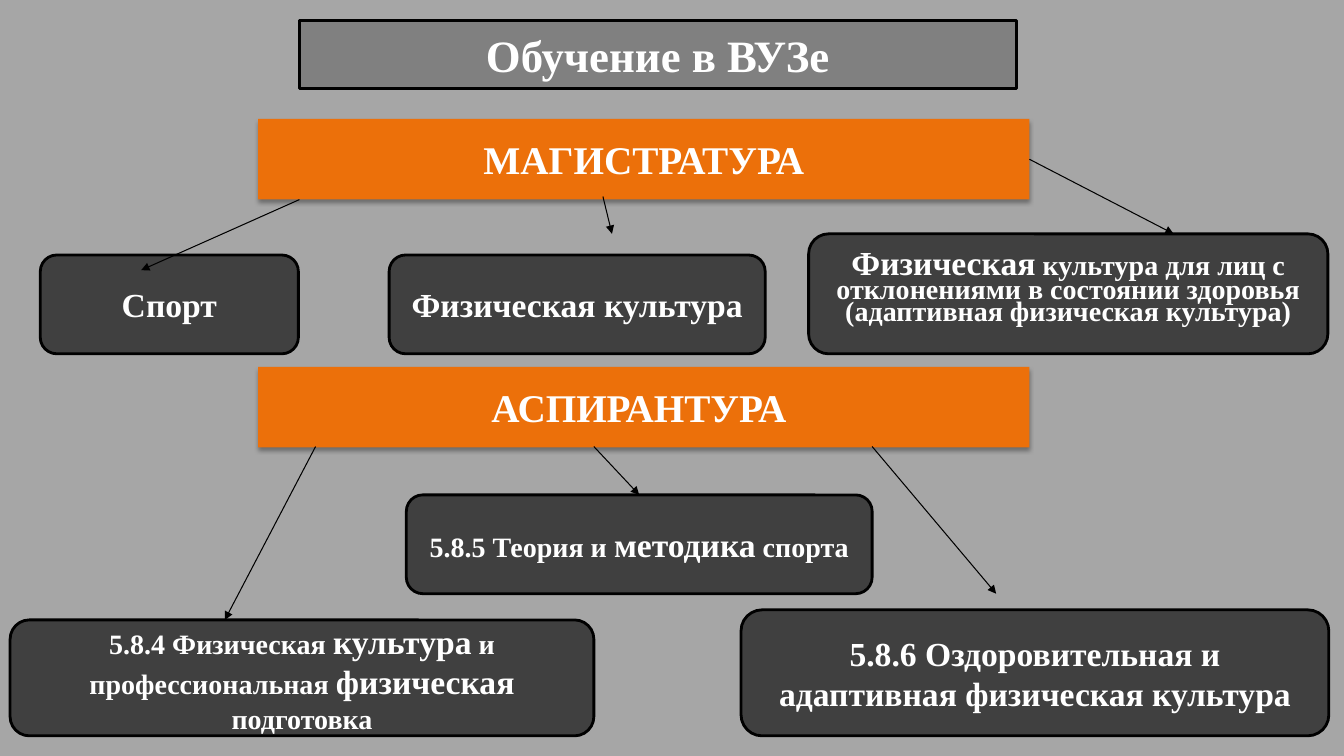
"""Build a slide on the master's and postgraduate study paths of a university."""
from dataclasses import dataclass

from lxml import etree
from pptx import Presentation
from pptx import util as u
from pptx.dml import color
from pptx.enum import shapes, text
from pptx.oxml import ns

WIDE, HIGH = u.Inches(13.33), u.Inches(7.5)
COL, ROW = WIDE / 133.3, HIGH / 75
HUES = {"back": "A6A6A6", "head": "808080", "card": "404040",
        "band": "EC700A", "ink": "000000", "text": "FFFFFF"}
FONT = "Times New Roman"
KIND = shapes.MSO_SHAPE
Run = tuple[str, int]


@dataclass
class Box:
    """A filled block placed in grid columns and rows."""
    col: float
    row: float
    cols: float
    rows: float
    runs: tuple[Run, ...]
    hue: str = "card"
    lead: float | None = None


@dataclass
class Arrow:
    """An arrow between two grid points, with optional (box, side) joins."""
    start: tuple[float, float]
    end: tuple[float, float]
    begin: tuple[str, int] | None = None
    stop: tuple[str, int] | None = None


HEAD = Box(29.7, 2, 71.1, 6.8, (("Обучение в ВУЗе", 32),), "head")
BOXES = {
    "master": Box(25.6, 11.8, 76.5, 8, (("МАГИСТРАТУРА", 28),), "band"),
    "sport": Box(4, 25.3, 25.6, 9.8, (("Спорт", 24),)),
    "culture": Box(38.6, 25.3, 37.3, 9.8, (("Физическая культура", 24),)),
    "adapt": Box(80.2, 23.2, 51.5, 11.9, (
        ("Физическая", 24),
        (" культура для лиц с отклонениями в состоянии здоровья "
         "(адаптивная физическая культура)", 20)), lead=16),
    "post": Box(25.6, 36.4, 76.5, 8, (("АСПИРАНТУРА ", 28),), "band"),
    "train": Box(1, 61.5, 57.9, 11.5, (
        ("5.8.4 Физическая ", 20), ("культура", 24),
        (" и профессиональная ", 20), ("физическая", 24),
        (" подготовка", 20))),
    "theory": Box(40.3, 49.1, 46.2, 9.8, (
        ("5.8.5 Теория и ", 20), ("методика", 24), (" спорта", 20))),
    "health": Box(73.5, 60.5, 58.3, 12.5, (
        ("5.8.6 Оздоровительная и адаптивная физическая культура", 24),)),
}
ARROWS = (
    Arrow((29.7, 19.8), (14, 26.8)),
    Arrow((102.2, 15.8), (116.4, 23.2), begin=("master", 3)),
    Arrow((59.8, 19.5), (60.7, 23.2)),
    Arrow((86.5, 44.3), (98.8, 58.9)),
    Arrow((31.3, 44.3), (22.3, 61.5)),
    Arrow((58.9, 44.3), (63.4, 49.1), stop=("theory", 0)),
)


def rgb(hue: str) -> color.RGBColor:
    """Look up a colour by name."""
    return color.RGBColor.from_string(HUES[hue])


def grid(col: float, row: float) -> tuple[int, int]:
    """Turn grid units into slide lengths."""
    return round(col * COL), round(row * ROW)


def add(parent, tag: str, **attrs: str):
    """Append a drawing element to its parent."""
    return etree.SubElement(parent, ns.qn(tag), attrs)


def write(frame, runs: tuple[Run, ...], *, hue: str = "text",
          bold: bool = True, lead: float | None = None) -> None:
    """Write centred runs of text into a frame."""
    frame.word_wrap = True
    frame.auto_size = text.MSO_AUTO_SIZE.NONE
    frame.vertical_anchor = text.MSO_ANCHOR.MIDDLE
    para = frame.paragraphs[0]
    para.alignment = text.PP_ALIGN.CENTER
    para.line_spacing = u.Pt(lead) if lead else 1.0
    for words, size in runs:
        run = para.add_run()
        run.text = words
        font = run.font
        font.name, font.size, font.bold = FONT, u.Pt(size), bold
        font.color.rgb = rgb(hue)


def dress(shape, box: Box) -> None:
    """Give a shape its fill, outline or shadow, and text."""
    shape.fill.solid()
    shape.fill.fore_color.rgb = rgb(box.hue)
    shape.shadow.inherit = False
    if box.hue == "band":
        shape.line.fill.background()
        glow = add(shape.element.spPr.find(ns.qn("a:effectLst")),
                   "a:outerShdw", blurRad=str(u.Pt(3.1)),
                   dist=str(u.Pt(1.8)), dir="5400000", rotWithShape="0")
        tint = add(glow, "a:srgbClr", val=HUES["ink"])
        add(tint, "a:alpha", val="35000")
    else:
        shape.line.color.rgb = rgb("ink")
        shape.line.width = u.Pt(2)
    write(shape.text_frame, box.runs, lead=box.lead)


def title(slide, box: Box) -> None:
    """Move the title placeholder and round its corners."""
    shape = slide.shapes.title
    shape.left, shape.top = grid(box.col, box.row)
    shape.width, shape.height = grid(box.cols, box.rows)
    add(add(shape.element.spPr, "a:prstGeom", prst="roundRect"), "a:avLst")
    dress(shape, box)


def block(slide, box: Box):
    """Draw a band or a card."""
    kind = (KIND.RECTANGLE if box.hue == "band"
            else KIND.FLOWCHART_ALTERNATE_PROCESS)
    shape = slide.shapes.add_shape(
        kind, *grid(box.col, box.row), *grid(box.cols, box.rows))
    dress(shape, box)
    return shape


def link(slide, arrow: Arrow, made: dict) -> None:
    """Draw an arrow and join it where it meets a side's middle."""
    line = slide.shapes.add_connector(
        shapes.MSO_CONNECTOR.STRAIGHT, *grid(*arrow.start), *grid(*arrow.end))
    if arrow.begin:
        name, side = arrow.begin
        line.begin_connect(made[name], side)
    if arrow.stop:
        name, side = arrow.stop
        line.end_connect(made[name], side)
    line.line.color.rgb = rgb("ink")
    line.line.width = u.Pt(0.75)
    frame = line.element.spPr
    add(frame.find(ns.qn("a:ln")), "a:tailEnd", type="triangle")
    add(frame, "a:effectLst")


def main() -> None:
    """Build and save the slide."""
    deck = Presentation()
    deck.slide_width, deck.slide_height = WIDE, HIGH
    slide = deck.slides.add_slide(deck.slide_layouts.get_by_name("Title Only"))
    slide.background.fill.solid()
    slide.background.fill.fore_color.rgb = rgb("back")
    title(slide, HEAD)
    made = {name: block(slide, box) for name, box in BOXES.items()}
    for arrow in ARROWS:
        link(slide, arrow, made)
    deck.save("out.pptx")


if __name__ == "__main__":
    main()
